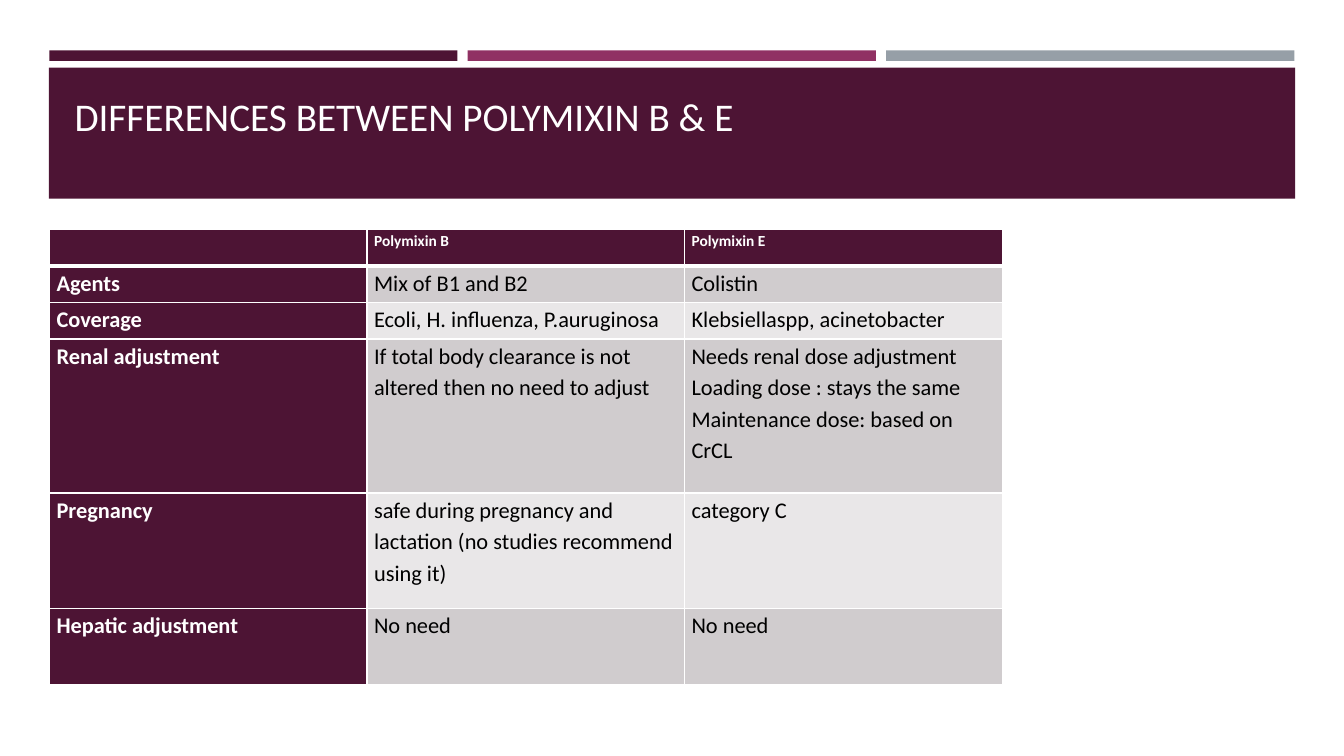
from lxml import etree
from pptx import Presentation
from pptx.dml.color import RGBColor
from pptx.enum.shapes import MSO_SHAPE
from pptx.enum.text import MSO_ANCHOR, MSO_AUTO_SIZE, PP_ALIGN
from pptx.oxml.ns import qn
from pptx.util import Pt

RECT = MSO_SHAPE.RECTANGLE
TOP = MSO_ANCHOR.TOP
LEFT = PP_ALIGN.LEFT
NO_FIT = MSO_AUTO_SIZE.NONE

PLUM = RGBColor(0x4D, 0x14, 0x34)
MAGENTA = RGBColor(0x90, 0x31, 0x63)
STEEL = RGBColor(0x96, 0x9F, 0xA7)
DARK_BAND = RGBColor(0xD0, 0xCC, 0xCE)
LIGHT_BAND = RGBColor(0xE9, 0xE7, 0xE8)
WHITE = RGBColor(0xFF, 0xFF, 0xFF)
BLACK = RGBColor(0, 0, 0)

ROWS = [
    ("", "Polymixin B", "Polymixin E"),
    ("Agents", "Mix of B1 and B2", "Colistin"),
    ("Coverage", "Ecoli, H. influenza, P.auruginosa", "Klebsiellaspp, acinetobacter"),
    ("Renal adjustment",
     "If total body clearance is not altered then no need to adjust",
     "Needs renal dose adjustment\nLoading dose : stays the same\n"
     "Maintenance dose: based on CrCL"),
    ("Pregnancy",
     "safe during pregnancy and lactation (no studies recommend using it)",
     "category C"),
    ("Hepatic adjustment", "No need", "No need"),
]
ROW_HEIGHTS = [26.2, 26.2, 26.2, 110, 82.4, 54.2]
COL_WIDTH = 226.8


def write(tf, text, size=16, color=BLACK, bold=False, spacing=1.0):
    """Fill a text frame, one paragraph per line of text."""
    for i, line in enumerate(text.split("\n")):
        p = tf.add_paragraph() if i else tf.paragraphs[0]
        p.alignment = LEFT
        p.line_spacing = spacing
        p.space_before = p.space_after = Pt(0)
        p.font.size = Pt(size)
        if line:
            r = p.add_run()
            r.text = line
            r.font.name = "Calibri"
            r.font.size = Pt(size)
            r.font.bold = bold
            r.font.color.rgb = color


def set_border(cell, side, width):
    ln = etree.SubElement(cell._tc.get_or_add_tcPr(), qn("a:ln" + side), w=str(Pt(width)))
    fill = etree.SubElement(ln, qn("a:solidFill"))
    etree.SubElement(fill, qn("a:srgbClr"), val=str(WHITE))


class SlideBuilder:
    def __init__(self, prs):
        self.slide = prs.slides.add_slide(prs.slide_layouts[5])
        self.shapes = self.slide.shapes

    def bar(self, x, y, w, h, color):
        sp = self.shapes.add_shape(RECT, Pt(x), Pt(y), Pt(w), Pt(h))
        sp.shadow.inherit = False
        sp.fill.solid()
        sp.fill.fore_color.rgb = color
        sp.line.fill.background()

    def title(self, text, x, y, w, h):
        """Place the title in front of the bars drawn so far."""
        sp = self.shapes.title
        self.shapes._spTree.append(sp._element)
        sp.left, sp.top, sp.width, sp.height = Pt(x), Pt(y), Pt(w), Pt(h)
        tf = sp.text_frame
        tf.word_wrap = True
        tf.auto_size = NO_FIT
        tf.vertical_anchor = TOP
        tf.margin_top = Pt(10.8)
        write(tf, text, size=28, color=WHITE)

    def cell(self, cell, text, row, col):
        header = row == 0
        label = header or col == 0
        cell.margin_left = cell.margin_right = Pt(5)
        cell.margin_top = cell.margin_bottom = 0
        cell.vertical_anchor = TOP
        write(cell.text_frame, text, size=11 if header else 16,
              color=WHITE if label else BLACK, bold=label, spacing=1.15)
        widths = {"L": 1, "R": 1, "T": 3 if row == 1 else 1, "B": 3 if header else 1}
        for side, width in widths.items():
            set_border(cell, side, width)
        cell.fill.solid()
        band = DARK_BAND if row % 2 else LIGHT_BAND
        cell.fill.fore_color.rgb = PLUM if label else band

    def table(self, x, y, rows, heights, col_width):
        n = len(rows[0])
        frame = self.shapes.add_table(len(rows), n, Pt(x), Pt(y),
                                      Pt(col_width * n), Pt(sum(heights)))
        tbl = frame.table
        tbl.horz_banding = False
        for col in tbl.columns:
            col.width = Pt(col_width)
        for i, (texts, height) in enumerate(zip(rows, heights)):
            tbl.rows[i].height = Pt(height)
            for j, text in enumerate(texts):
                self.cell(tbl.cell(i, j), text, i, j)


def main():
    prs = Presentation()
    prs.slide_width, prs.slide_height = Pt(960), Pt(540)
    s = SlideBuilder(prs)
    for i, color in enumerate((PLUM, MAGENTA, STEEL)):
        s.bar(35.2 + i * 298.9, 36, 291.6, 7.5, color)
    s.bar(34.9, 48.4, 890.3, 93.6, PLUM)
    s.title("DIFFERENCES BETWEEN POLYMIXIN B & E", 46.1, 55.4, 868.3, 79.9)
    s.table(35.4, 163.6, ROWS, ROW_HEIGHTS, COL_WIDTH)
    prs.save("out.pptx")


if __name__ == "__main__":
    main()
